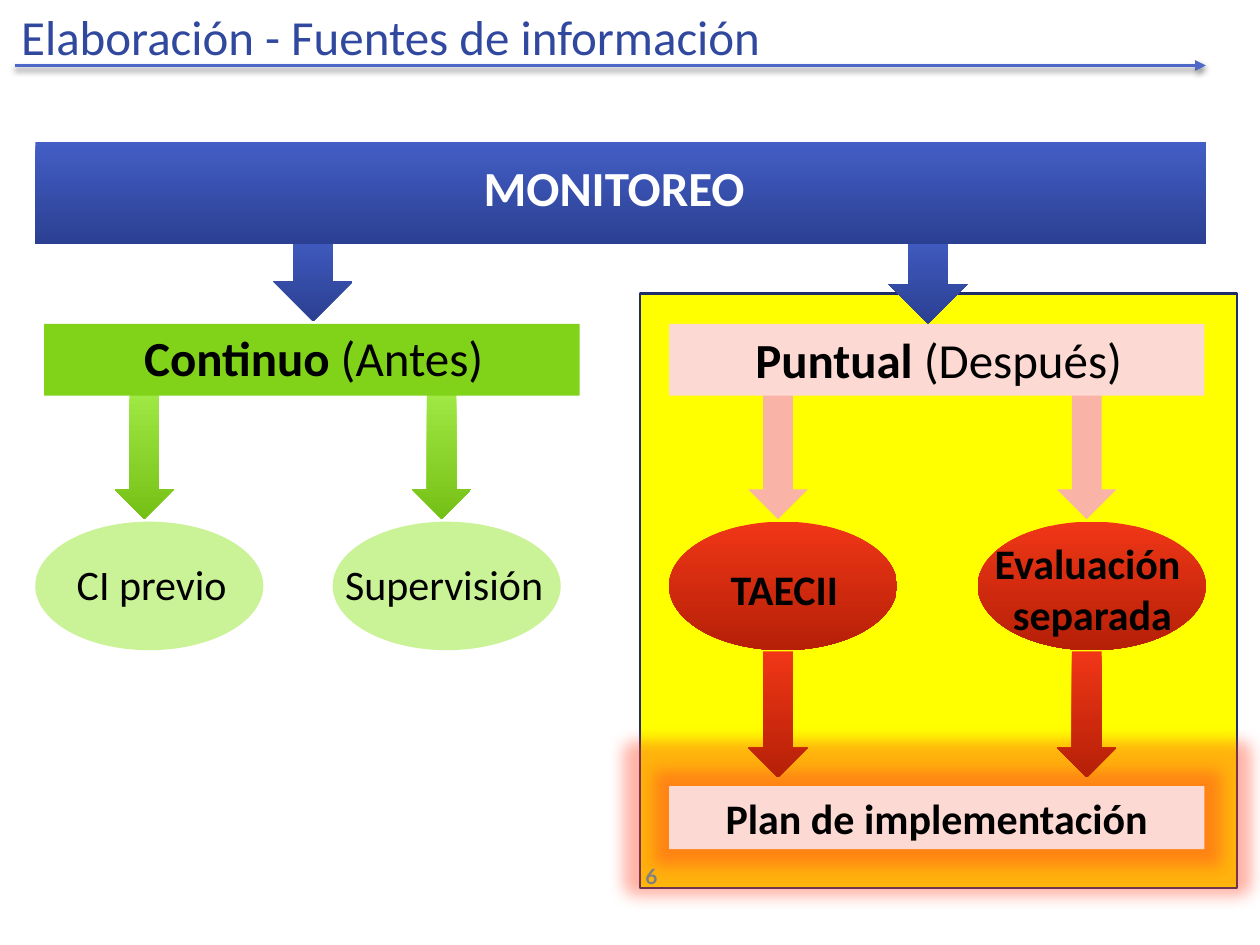
from dataclasses import dataclass

import pptx
import pptx.dml.color
import pptx.enum.shapes
import pptx.enum.text
import pptx.oxml
import pptx.oxml.ns
import pptx.util

SHAPE = pptx.enum.shapes.MSO_SHAPE
ALIGN = pptx.enum.text.PP_ALIGN
ANCHOR = pptx.enum.text.MSO_ANCHOR

# Grid of 100 columns by 75 rows
prs = pptx.Presentation()
prs.slide_width = pptx.util.Inches(10)
prs.slide_height = pptx.util.Inches(7.5)
COL = prs.slide_width / 100
ROW = prs.slide_height / 75

COLORS = {
    "title": "31489F", "rule": "4E67C8", "panel": "FFFF00", "panel_line": "1F2E69",
    "blue_top": "435EC5", "blue_end": "2B4092",
    "green": "81D31A", "green_top": "A0E844", "green_end": "75C016", "green_pale": "CAF297",
    "red_top": "F03617", "red_end": "B52007", "pink": "F9B3A7", "pink_pale": "FCD9D3",
    "glow": "FF4020", "black": "000000", "white": "FFFFFF", "number": "808080",
}
BLUE, GREEN, RED = [(f"{n}_top", f"{n}_end") for n in ("blue", "green", "red")]

BAR_TOP, OVAL_TOP = 25.7, 41.4
BAR_W, BAR_H = 42.5, 5.7
OVAL_W, OVAL_H = 18.1, 10.2
ARROW_W, ARROW_H = 4.7, 10
UPPER_ARROWS, LOWER_ARROWS = 31.2, 51.7


@dataclass(frozen=True)
class Box:
    """A place on the grid, in columns and rows."""
    x: float
    y: float
    w: float
    h: float

    def emu(self) -> list[int]:
        return [round(self.x * COL), round(self.y * ROW), round(self.w * COL), round(self.h * ROW)]


@dataclass(frozen=True)
class Branch:
    bar_x: float
    bar_fill: str
    arrow_xs: tuple
    arrow_fill: str | tuple
    oval_xs: tuple
    oval_fill: str | tuple


BRANCHES = [
    Branch(3.5, "green", (9.1, 32.7), GREEN, (2.8, 26.4), "green_pale"),
    Branch(53.1, "pink_pale", (59.4, 83.9), "pink", (53.1, 77.6), RED),
]


def rgb(name: str) -> pptx.dml.color.RGBColor:
    return pptx.dml.color.RGBColor.from_string(COLORS[name])


def add_effects(sp, inner: str = "") -> None:
    ns = pptx.oxml.ns.nsdecls("a")
    sp._element.spPr.append(pptx.oxml.parse_xml(f"<a:effectLst {ns}>{inner}</a:effectLst>"))


def add_block(kind, box: Box, fill: str | tuple, line: str | None = None):
    """Draw a preset shape; a pair of colours gives a top-down gradient."""
    sp = slide.shapes.add_shape(kind, *box.emu())
    sp.shadow.inherit = False
    if isinstance(fill, tuple):
        sp.fill.gradient()
        sp.fill.gradient_angle = 270
        for stop, name, position in zip(sp.fill.gradient_stops, fill, (0, 1)):
            stop.color.rgb = rgb(name)
            stop.position = position
    else:
        sp.fill.solid()
        sp.fill.fore_color.rgb = rgb(fill)
    if line:
        sp.line.color.rgb = rgb(line)
        sp.line.width = pptx.util.Pt(1.25)
    else:
        sp.line.fill.background()
    return sp


def write(sp, *lines: str, size=24, bold=False, color="black", align=ALIGN.LEFT,
          font="Calibri", anchor=ANCHOR.TOP, wrap=True, plain_tail="") -> None:
    """Fill a shape with lines; plain_tail follows the last one without bold."""
    tf = sp.text_frame
    tf.word_wrap = wrap
    tf.vertical_anchor = anchor
    for i, line in enumerate(lines):
        p = tf.add_paragraph() if i else tf.paragraphs[0]
        p.alignment = align
        runs = [(line, bold)]
        if plain_tail and i == len(lines) - 1:
            runs.append((plain_tail, False))
        for text, is_bold in runs:
            r = p.add_run()
            r.text = text
            r.font.name = font
            r.font.size = pptx.util.Pt(size)
            r.font.bold = is_bold
            r.font.color.rgb = rgb(color)


def add_label(box: Box, *lines: str, **style) -> None:
    write(slide.shapes.add_textbox(*box.emu()), *lines, **style)


def add_arrows(xs: tuple, y: float, fill: str | tuple) -> None:
    for x in xs:
        add_block(SHAPE.DOWN_ARROW, Box(x, y, ARROW_W, ARROW_H), fill)


def add_title_rule(x1: float, x2: float, y: float) -> None:
    rule = slide.shapes.add_connector(
        pptx.enum.shapes.MSO_CONNECTOR.STRAIGHT,
        round(x1 * COL), round(y * ROW), round(x2 * COL), round(y * ROW))
    rule.line.color.rgb = rgb("rule")
    rule.line.width = pptx.util.Pt(2)
    ns = pptx.oxml.ns.nsdecls("a")
    rule.line._get_or_add_ln().append(pptx.oxml.parse_xml(f'<a:tailEnd {ns} type="triangle"/>'))
    add_effects(rule, f'<a:outerShdw blurRad="{pptx.util.Pt(3.1)}" dist="{pptx.util.Pt(1.8)}" '
                      f'dir="5400000" rotWithShape="0"><a:srgbClr val="{COLORS["black"]}">'
                      '<a:alpha val="45000"/></a:srgbClr></a:outerShdw>')


slide = prs.slides.add_slide(prs.slide_layouts[6])

add_block(SHAPE.RECTANGLE, Box(50.8, 23.3, 47.4, 47.2), "panel", "panel_line")
add_label(Box(0.7, 0, 69.4, 5.7), "Elaboración - Fuentes de información",
          size=28, color="title", wrap=False)

for x, y in ((21.7, 18), (70.5, 18.2)):
    add_block(SHAPE.DOWN_ARROW, Box(x, y, 6.3, 7.5), BLUE)
for branch in BRANCHES:
    add_arrows(branch.arrow_xs, UPPER_ARROWS, branch.arrow_fill)
add_block(SHAPE.RECTANGLE, Box(2.8, 11.3, 92.9, 8.1), BLUE)
for branch in BRANCHES:
    add_block(SHAPE.RECTANGLE, Box(branch.bar_x, BAR_TOP, BAR_W, BAR_H), branch.bar_fill)
    for x in branch.oval_xs:
        add_block(SHAPE.OVAL, Box(x, OVAL_TOP, OVAL_W, OVAL_H), branch.oval_fill)

add_label(Box(37.4, 12, 24.2, 5.7), "MONITOREO",
          size=28, bold=True, color="white", align=ALIGN.JUSTIFY)
heading = dict(size=28, bold=True, align=ALIGN.CENTER)
add_label(Box(6.7, 25.5, 36.4, 5.7), "Continuo ", plain_tail="(Antes)", **heading)
add_label(Box(56.3, 25.7, 36.4, 5.7), "Puntual ", plain_tail="(Después)", **heading)
add_label(Box(5.1, 43.8, 20.2, 5), "CI previo")
add_label(Box(26.4, 43.8, 20.4, 5), "Supervisión")
strong = dict(bold=True, align=ALIGN.CENTER)
add_label(Box(54.8, 44.2, 14.9, 5), "TAECII", **strong)
add_label(Box(75.2, 42.2, 23, 9.1), "Evaluación ", "separada", **strong)

plan = add_block(SHAPE.RECTANGLE, Box(53.1, 62.4, BAR_W, 5), "pink_pale")
plan._element.spPr.remove(plan._element.spPr.find(pptx.oxml.ns.qn("a:effectLst")))
add_effects(plan, f'<a:glow rad="{pptx.util.Pt(18)}"><a:srgbClr val="{COLORS["glow"]}">'
                  '<a:alpha val="40000"/></a:srgbClr></a:glow>')
write(plan, "Plan de implementación", **strong)
add_arrows(BRANCHES[1].arrow_xs, LOWER_ARROWS, RED)

add_label(Box(41.7, 67.5, 20, 4), "6", size=12, font="Lato", color="number",
          anchor=ANCHOR.MIDDLE, **strong)
add_title_rule(1.2, 95.7, 5.2)

prs.save("out.pptx")
